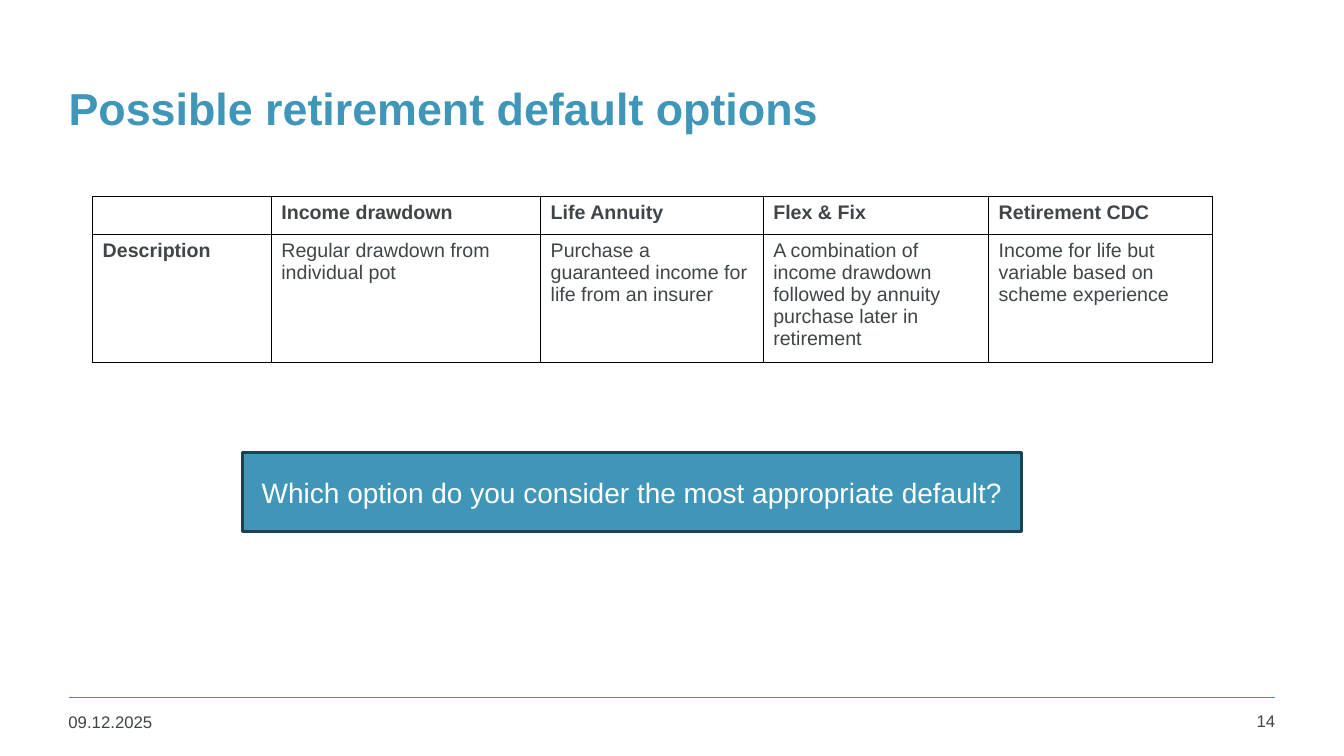
from lxml.etree import SubElement
from pptx import Presentation
from pptx.dml.color import RGBColor
from pptx.enum.shapes import MSO_CONNECTOR, MSO_SHAPE
from pptx.enum.text import MSO_ANCHOR, MSO_AUTO_SIZE, PP_ALIGN
from pptx.oxml.ns import qn
from pptx.util import Pt

COLORS = {
    "accent": "4096B8",
    "accent_dark": "1C4251",
    "text": "3F4548",
    "white": "FFFFFF",
    "grid": "000000",
}


def color(name):
    return RGBColor.from_string(COLORS[name])


def write(frame, text, size=14, ink="text", bold=False,
          align=PP_ALIGN.LEFT, anchor=MSO_ANCHOR.TOP):
    frame.word_wrap = True
    frame.vertical_anchor = anchor
    paragraph = frame.paragraphs[0]
    paragraph.alignment = align
    run = paragraph.add_run()
    run.text = text
    run.font.name = "Arial"
    run.font.size = Pt(size)
    run.font.bold = bold
    run.font.color.rgb = color(ink)


class SlideBuilder:
    """Holds the current slide and draws styled elements on it, in points."""

    def __init__(self, slide):
        self.slide = slide
        self.shapes = slide.shapes

    def title(self, text, left, top, width, height):
        heading = self.shapes.title
        heading.left, heading.top = Pt(left), Pt(top)
        heading.width, heading.height = Pt(width), Pt(height)
        heading.text_frame.auto_size = MSO_AUTO_SIZE.NONE
        write(heading.text_frame, text, size=32, ink="accent", bold=True,
              anchor=MSO_ANCHOR.MIDDLE)

    def label(self, text, left, top, width, height, **style):
        box = self.shapes.add_textbox(Pt(left), Pt(top), Pt(width), Pt(height))
        write(box.text_frame, text, **style)

    def rule(self, left, right, y):
        line = self.shapes.add_connector(
            MSO_CONNECTOR.STRAIGHT, Pt(left), Pt(y), Pt(right), Pt(y))
        line.line.color.rgb = color("accent")
        line.line.width = Pt(1)
        SubElement(line._element.spPr, qn("a:effectLst"))

    def banner(self, text, left, top, width, height):
        box = self.shapes.add_shape(
            MSO_SHAPE.RECTANGLE, Pt(left), Pt(top), Pt(width), Pt(height))
        box.shadow.inherit = False
        box.fill.solid()
        box.fill.fore_color.rgb = color("accent")
        box.line.color.rgb = color("accent_dark")
        box.line.width = Pt(2)
        write(box.text_frame, text, size=20, ink="white",
              align=PP_ALIGN.CENTER, anchor=MSO_ANCHOR.MIDDLE)

    def table(self, rows, left, top, widths, heights):
        grid = self.shapes.add_table(
            len(rows), len(widths), Pt(left), Pt(top),
            Pt(sum(widths)), Pt(sum(heights))).table
        grid.horz_banding = False
        for column, width in zip(grid.columns, widths):
            column.width = Pt(width)
        for r, (texts, height) in enumerate(zip(rows, heights)):
            grid.rows[r].height = Pt(height)
            for c, text in enumerate(texts):
                self.cell(grid.cell(r, c), text, bold=r == 0 or c == 0)

    def cell(self, cell, text, bold):
        write(cell.text_frame, text, bold=bold)
        # Borders come before the fill in the cell properties
        properties = cell._tc.get_or_add_tcPr()
        for side in ("a:lnL", "a:lnR", "a:lnT", "a:lnB"):
            border = SubElement(properties, qn(side), w=str(Pt(1)))
            fill = SubElement(border, qn("a:solidFill"))
            SubElement(fill, qn("a:srgbClr"), val=COLORS["grid"])
        cell.fill.solid()
        cell.fill.fore_color.rgb = color("white")


def main():
    deck = Presentation()
    deck.slide_width, deck.slide_height = Pt(960), Pt(540)
    page = SlideBuilder(deck.slides.add_slide(deck.slide_layouts[5]))

    # Heading
    page.title("Possible retirement default options", 41.8, 31.7, 870.5, 90)

    # Comparison of the options
    options = [
        ["", "Income drawdown", "Life Annuity", "Flex & Fix", "Retirement CDC"],
        ["Description",
         "Regular drawdown from individual pot",
         "Purchase a guaranteed income for life from an insurer",
         "A combination of income drawdown followed by annuity purchase "
         "later in retirement",
         "Income for life but variable based on scheme experience"],
    ]
    page.table(options, 66.2, 140.4,
               widths=[127.6, 192.4, 159, 161, 160], heights=[24, 91.4])

    # Question to the audience
    page.banner("Which option do you consider the most appropriate default?",
                173.5, 323.3, 556, 56.2)

    # Footer
    page.rule(49, 910.8, 498.2)
    page.label("09.12.2025", 41.8, 504.7, 211.7, 26, size=12)
    page.label("14", 850.3, 504, 67.7, 26.6, size=12, align=PP_ALIGN.RIGHT)

    deck.save("out.pptx")


if __name__ == "__main__":
    main()
